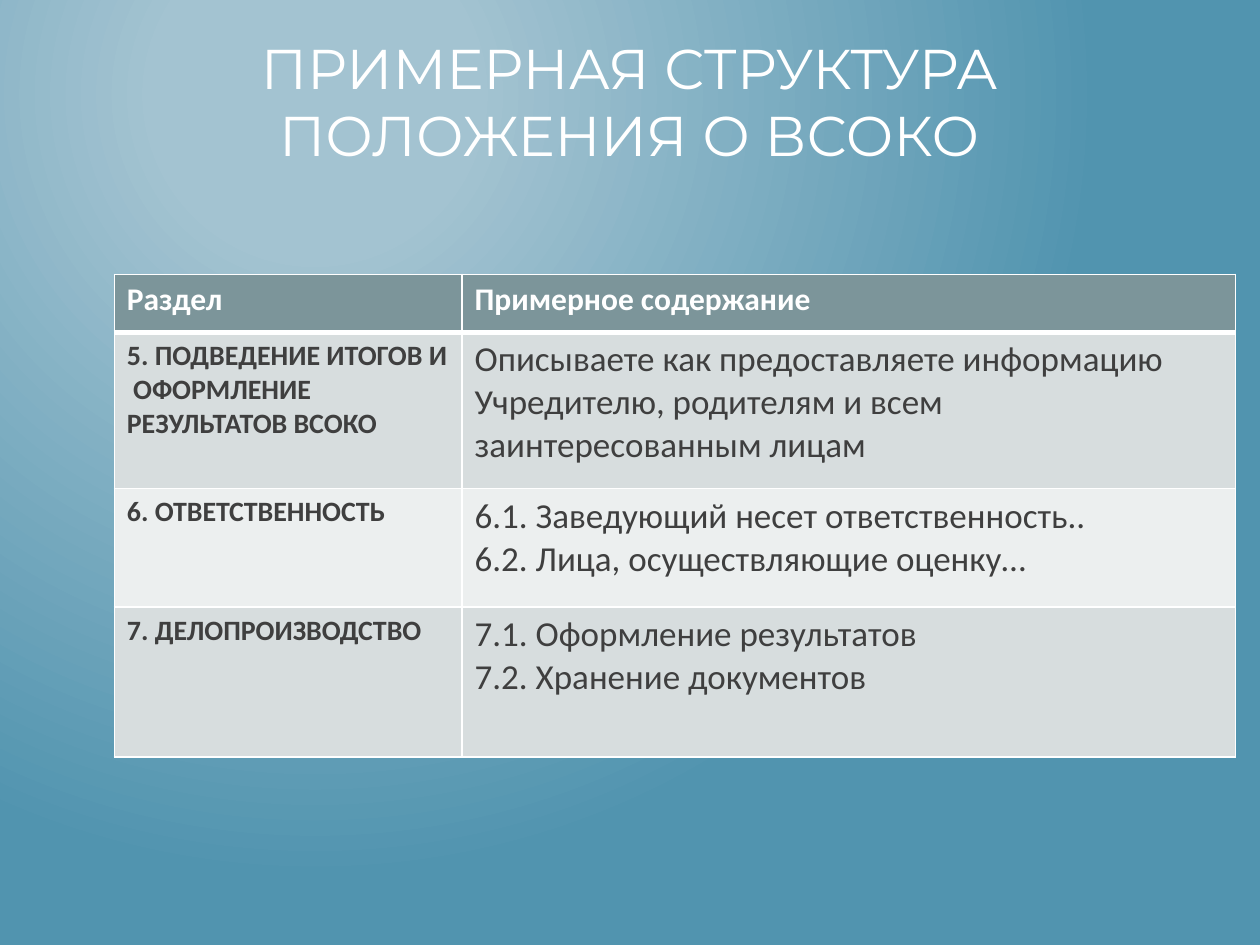
from lxml import etree
from pptx import Presentation
from pptx.dml.color import RGBColor
from pptx.enum import text
from pptx.oxml import ns
from pptx.util import Pt

COLORS = {
    "glow": "A3C3D1", "deep": "5194AF", "white": "FFFFFF", "ink": "3F3F3F",
    "header": "7C959A", "odd": "D7DDDE", "even": "ECEFEF",
}
TITLE = "ПРИМЕРНАЯ СТРУКТУРА ПОЛОЖЕНИЯ О ВСОКО"
HEADERS = ["Раздел", "Примерное содержание"]
SECTIONS = [
    (["5. ПОДВЕДЕНИЕ ИТОГОВ И ОФОРМЛЕНИЕ ", "РЕЗУЛЬТАТОВ ВСОКО"],
     ["Описываете как предоставляете информацию Учредителю, "
      "родителям и всем заинтересованным лицам"]),
    (["6. ОТВЕТСТВЕННОСТЬ"],
     ["6.1. Заведующий несет ответственность..",
      "6.2. Лица, осуществляющие оценку…"]),
    (["7. ДЕЛОПРОИЗВОДСТВО"],
     ["7.1. Оформление результатов", "7.2. Хранение документов"]),
]
COLUMN_WIDTHS = [198.7, 442.1]
ROW_HEIGHTS = [33.1, 89.3, 67.7, 85.7]
NO_BREAK_SPACE = chr(160)

TITLE_FONT = {"name": "Montserrat", "size": Pt(32), "bold": False}
HEADER_FONT = {"name": "Calibri", "size": Pt(18), "bold": True}
SECTION_FONT = {"name": "Calibri", "size": Pt(16), "bold": True}
CONTENT_FONT = {"name": "Calibri", "size": Pt(20), "bold": False}


def rgb(color):
    return RGBColor.from_string(COLORS[color])


def write(frame, lines, formats, color):
    """Put one paragraph per line into the frame."""
    for index, line in enumerate(lines):
        para = frame.add_paragraph() if index else frame.paragraphs[0]
        span = para.add_run()
        span.text = line
        for name, value in formats.items():
            setattr(span.font, name, value)
        span.font.color.rgb = rgb(color)


def paint_background(page):
    fill = page.background.fill
    fill.gradient()
    for stop, (position, color) in zip(fill.gradient_stops, [(0.2, "glow"), (1, "deep")]):
        stop.position = position
        stop.color.rgb = rgb(color)
    gradient = page.element.find(".//" + ns.qn("a:gradFill"))
    gradient.remove(gradient.find(ns.qn("a:lin")))
    circle = etree.Element(ns.qn("a:path"), path="circle")
    etree.SubElement(circle, ns.qn("a:fillToRect"),
                     l="50000", t="20000", r="100000", b="100000")
    gradient.find(ns.qn("a:gsLst")).addnext(circle)


def place_title(page, left, top, width, height):
    title = page.shapes.title
    box = {"left": left, "top": top, "width": width, "height": height}
    for name, value in box.items():
        setattr(title, name, Pt(value))
    frame = title.text_frame
    frame.word_wrap = True
    frame.auto_size = text.MSO_AUTO_SIZE.NONE
    frame.vertical_anchor = text.MSO_ANCHOR.MIDDLE
    frame.margin_left = frame.margin_right = Pt(14)
    write(frame, [TITLE], TITLE_FONT, "white")
    frame.paragraphs[0].alignment = text.PP_ALIGN.CENTER


def set_borders(cell, bottom=1, top=1):
    properties = cell._tc.get_or_add_tcPr()
    widths = {"a:lnL": 1, "a:lnR": 1, "a:lnT": top, "a:lnB": bottom}
    for index, (tag, width) in enumerate(widths.items()):
        line = etree.Element(ns.qn(tag), w=str(Pt(width)))
        solid = etree.SubElement(line, ns.qn("a:solidFill"))
        etree.SubElement(solid, ns.qn("a:srgbClr"), val=COLORS["white"])
        properties.insert(index, line)


def fill_cell(cell, lines, formats, ink, fill):
    cell.fill.solid()
    cell.fill.fore_color.rgb = rgb(fill)
    write(cell.text_frame, lines, formats, ink)


def place_table(page, left, top):
    table = page.shapes.add_table(
        len(ROW_HEIGHTS), len(COLUMN_WIDTHS), Pt(left), Pt(top),
        Pt(sum(COLUMN_WIDTHS)), Pt(sum(ROW_HEIGHTS))).table
    for column, width in zip(table.columns, COLUMN_WIDTHS):
        column.width = Pt(width)
    for row, height in zip(table.rows, ROW_HEIGHTS):
        row.height = Pt(height)

    for column, header in enumerate(HEADERS):
        cell = table.cell(0, column)
        fill_cell(cell, [header], HEADER_FONT, "white", "header")
        set_borders(cell, bottom=3)
    for row, (names, contents) in enumerate(SECTIONS, start=1):
        fill = "odd" if row % 2 else "even"
        names = [name.replace(" ", NO_BREAK_SPACE) for name in names]
        fill_cell(table.cell(row, 0), names, SECTION_FONT, "ink", fill)
        fill_cell(table.cell(row, 1), contents, CONTENT_FONT, "ink", fill)
        for cell in table.rows[row].cells:
            set_borders(cell, top=3 if row == 1 else 1)


def main():
    deck = Presentation()
    deck.slide_width, deck.slide_height = Pt(720), Pt(540)
    page = deck.slides.add_slide(deck.slide_layouts.get_by_name("Title Only"))
    paint_background(page)
    place_title(page, 25.2, 15.1, 669, 85)
    place_table(page, 65.3, 156.8)
    deck.save("out.pptx")


if __name__ == "__main__":
    main()
